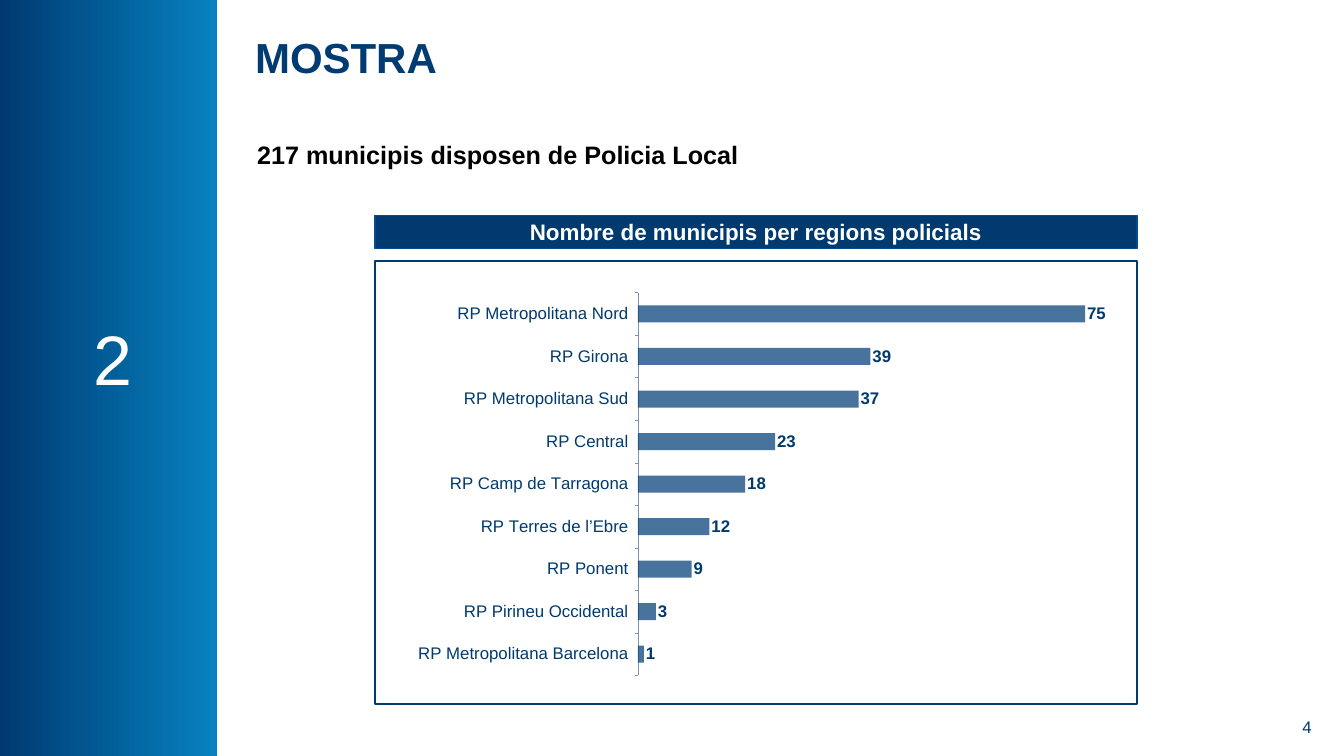
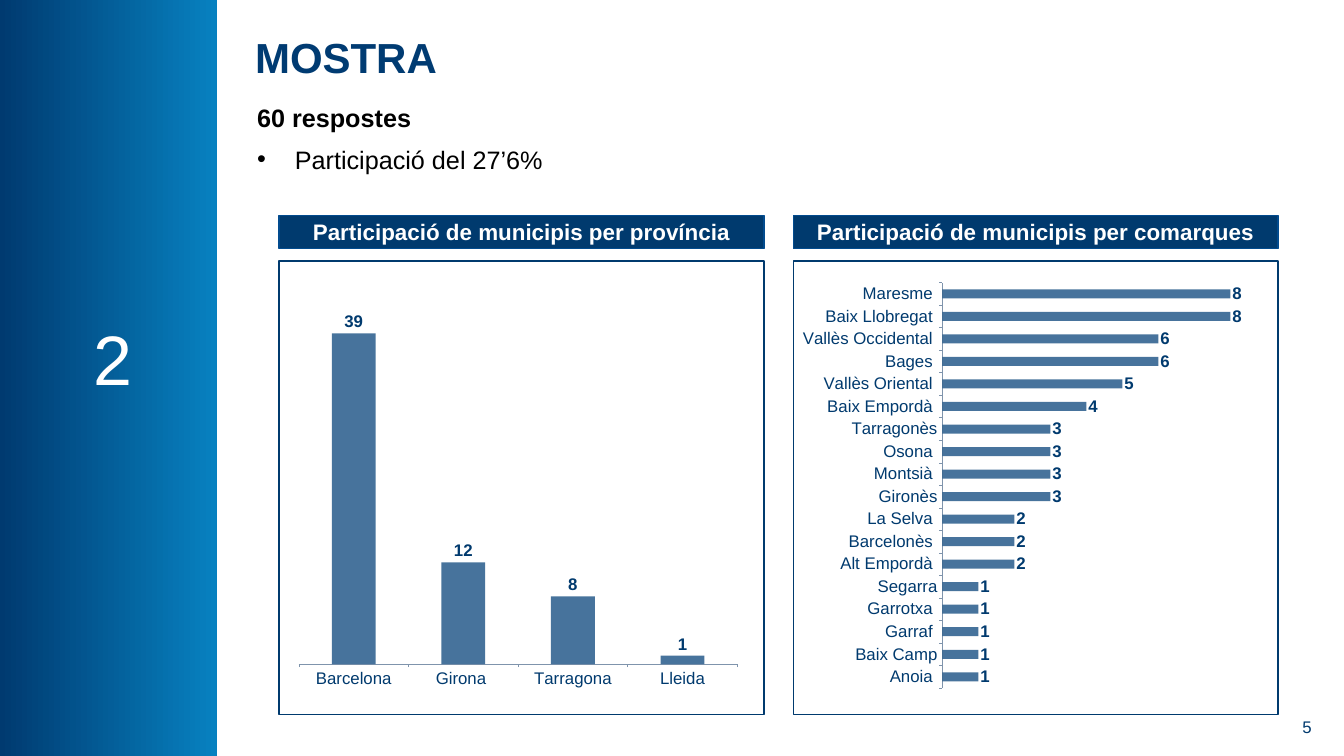
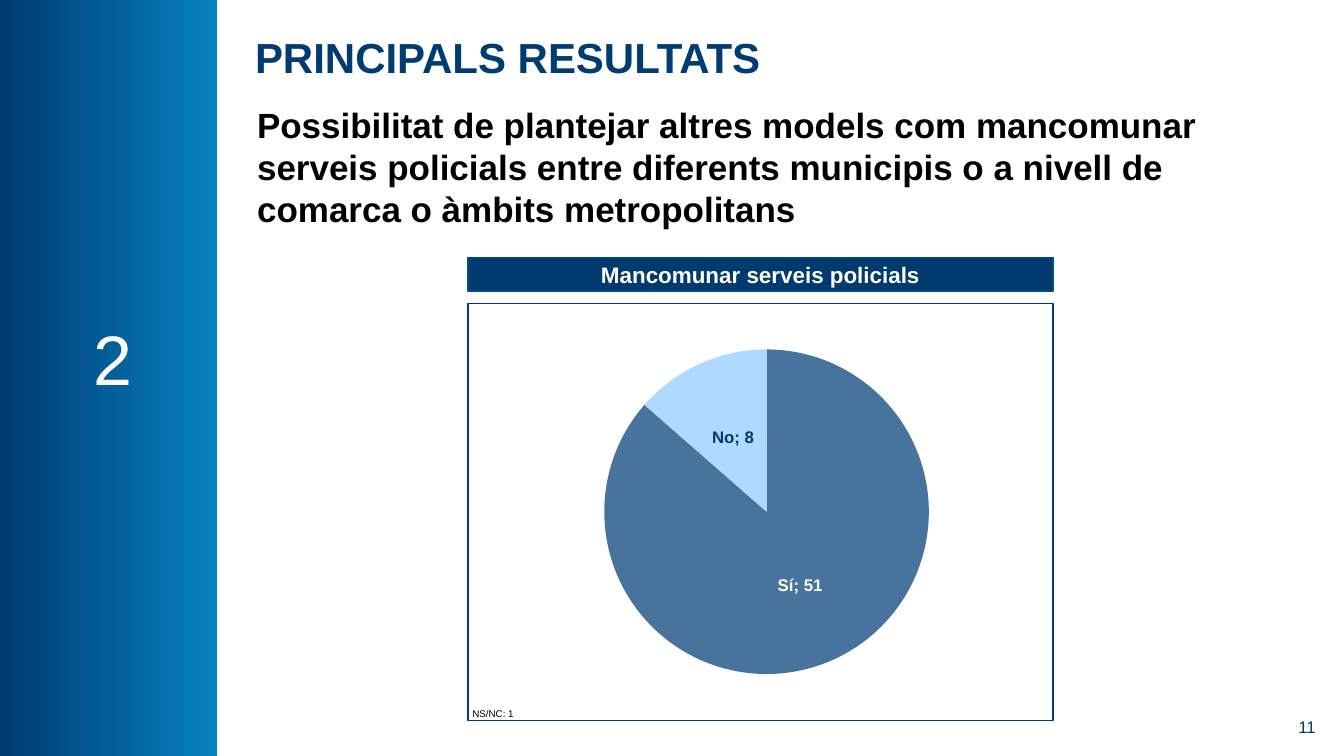
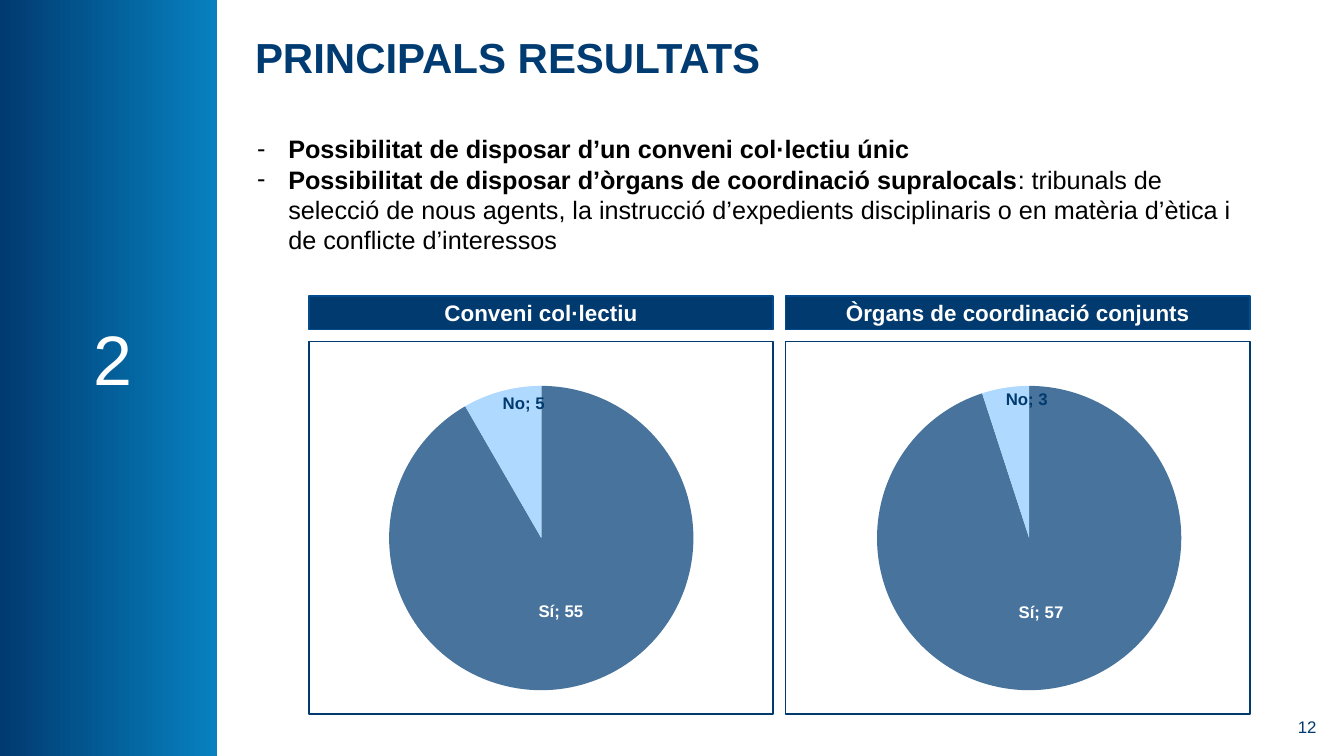
"""Build four slides on the survey sample and its main results."""
from typing import NamedTuple

from lxml.etree import SubElement
from pptx import Presentation
from pptx.chart.data import CategoryChartData
from pptx.dml.color import RGBColor
from pptx.enum.chart import XL_CHART_TYPE, XL_LABEL_POSITION, XL_TICK_MARK
from pptx.enum.shapes import MSO_SHAPE
from pptx.enum.text import MSO_ANCHOR, MSO_AUTO_SIZE, PP_ALIGN
from pptx.oxml.ns import qn
from pptx.util import Inches, Pt


class Theme:
    font = "Arial"
    navy = RGBColor.from_string("003A6E")
    title = RGBColor.from_string("003B72")
    heading_line = RGBColor.from_string("024B8E")
    band = [RGBColor.from_string("003A70"), RGBColor.from_string("0781C0")]
    bar = RGBColor.from_string("003E76")
    bar_opacity = "72000"
    light = RGBColor.from_string("AFD9FF")
    axis = RGBColor.from_string("7F94AC")
    white = RGBColor.from_string("FFFFFF")
    black = RGBColor.from_string("000000")
    section_size, title_size, lead_size, body_size = 100, 60, 50, 36
    heading_size, label_size, note_size = 32, 24, 14


class Panel(NamedTuple):
    heading: str
    left: float
    width: float
    chart_box: tuple
    chart_type: XL_CHART_TYPE
    values: dict
    axis_maximum: int = 0
    pie_share: float = 0
    small_slice_label: XL_LABEL_POSITION = XL_LABEL_POSITION.CENTER


class Page(NamedTuple):
    number: int
    title: str
    body_box: tuple
    body_size: int
    paragraphs: list
    line_spacing: float
    space_after: int
    indent: float
    panel_top: float
    frame_height: float
    panels: list
    note: str = ""


COLUMNS, ROWS = 160, 90
HEADING_HEIGHT, FRAME_OFFSET = 4, 5.46
BAR, COLUMN, PIE = XL_CHART_TYPE.BAR_CLUSTERED, XL_CHART_TYPE.COLUMN_CLUSTERED, XL_CHART_TYPE.PIE

regions = {
    "RP Metropolitana Barcelona ": 1, "RP Pirineu Occidental ": 3, "RP Ponent ": 9,
    "RP Terres de l’Ebre ": 12, "RP Camp de Tarragona ": 18, "RP Central ": 23,
    "RP Metropolitana Sud ": 37, "RP Girona ": 39, "RP Metropolitana Nord ": 75,
}
provinces = {"Barcelona": 39, "Girona ": 12, "Tarragona": 8, "Lleida": 1}
counties = {
    "Anoia ": 1, "Baix Camp": 1, "Garraf ": 1, "Garrotxa ": 1, "Segarra": 1,
    "Alt Empordà ": 2, "Barcelonès ": 2, "La Selva ": 2, "Gironès": 3, "Montsià ": 3,
    "Osona ": 3, "Tarragonès": 3, "Baix Empordà ": 4, "Vallès Oriental ": 5, "Bages ": 6,
    "Vallès Occidental ": 6, "Baix Llobregat ": 8, "Maresme ": 8,
}

pages = [
    Page(
        4, "MOSTRA", (30, 15.8, 112.8, 4.8), Theme.body_size,
        [("", [("217 municipis disposen de Policia Local", True)])],
        1.15, 10, 0, 25.62, 52.74,
        [Panel("Nombre de municipis per regions policials", 44.64, 90.72,
               (48.06, 33.9, 86.4, 47.46), BAR, regions, 80)],
    ),
    Page(
        5, "MOSTRA", (30, 11.34, 112.8, 9.78), Theme.body_size,
        [("", [("60 respostes", True)]), ("•", [("Participació del 27’6%", False)])],
        1.15, 10, 0.75, 25.62, 54,
        [Panel("Participació de municipis per província", 33.24, 57.72,
               (34.5, 32.64, 54.36, 50.28), COLUMN, provinces, 45),
         Panel("Participació de municipis per comarques", 94.44, 57.72,
               (94.44, 32.64, 57.48, 50.28), BAR, counties, 9)],
    ),
    Page(
        11, "PRINCIPALS RESULTATS", (30, 12, 122.5, 15.78), Theme.lead_size,
        [("", [("Possibilitat de plantejar altres models com mancomunar serveis policials entre "
                "diferents municipis o a nivell de comarca o àmbits metropolitans", True)])],
        1, 0, 0, 30.66, 49.68,
        [Panel("Mancomunar serveis policials", 55.74, 69.6,
               (57.84, 40.8, 66.84, 40.26), PIE, {"Sí": 51, "No": 8}, pie_share=0.96)],
        "NS/NC: 1",
    ),
    Page(
        12, "PRINCIPALS RESULTATS", (30, 15.6, 119.2, 15.12), Theme.body_size,
        [("-", [("Possibilitat de disposar d’un conveni col·lectiu únic", True)]),
         ("-", [("Possibilitat de disposar d’òrgans de coordinació supralocals", True),
                (": tribunals de selecció de nous agents, la instrucció d’expedients disciplinaris "
                 "o en matèria d’ètica i de conflicte d’interessos", False)])],
        1, 0, 0.62, 35.22, 44.34,
        [Panel("Conveni col·lectiu", 36.78, 55.26, (31.02, 42.72, 66.84, 40.26), PIE,
               {"Sí": 55, "No": 5}, pie_share=0.9, small_slice_label=XL_LABEL_POSITION.INSIDE_END),
         Panel("Òrgans de coordinació conjunts", 93.54, 55.26, (89.1, 42.72, 66.84, 40.26), PIE,
               {"Sí": 57, "No": 3}, pie_share=0.9, small_slice_label=XL_LABEL_POSITION.INSIDE_END)],
    ),
]

presentation = Presentation()
presentation.slide_width, presentation.slide_height = Inches(26.67), Inches(15)
layout = presentation.slide_layouts[1]


def grid(left, top, width, height):
    """Turn grid columns and rows into slide lengths."""
    column = presentation.slide_width / COLUMNS
    row = presentation.slide_height / ROWS
    return [round(length) for length in (left * column, top * row, width * column, height * row)]


def write(shape, text, size, color, bold=False, alignment=PP_ALIGN.CENTER, margin=0.06):
    """Write one formatted paragraph into a shape and return it."""
    frame = shape.text_frame
    frame.word_wrap = True
    frame.auto_size = MSO_AUTO_SIZE.NONE
    frame.margin_left = frame.margin_right = frame.margin_top = frame.margin_bottom = Inches(margin)
    frame.text = text
    paragraph = frame.paragraphs[0]
    paragraph.alignment = alignment
    font = paragraph.font
    font.name, font.size, font.bold, font.color.rgb = Theme.font, Pt(size), bold, color
    return paragraph


for page in pages:
    slide = presentation.slides.add_slide(layout)

    if page is pages[0]:
        band = slide.shapes.add_shape(MSO_SHAPE.RECTANGLE, *grid(0, 0, 25.8, ROWS))
        band.shadow.inherit = False
        band.line.fill.background()
        band.fill.gradient()
        band.fill.gradient_angle = 0
        for stop, position, color in zip(band.fill.gradient_stops, (0, 1), Theme.band):
            stop.position, stop.color.rgb = position, color
        layout.shapes.element.insert(2, band.element)

    title, body = slide.placeholders
    title.left, title.top, title.width, title.height = grid(30, 2.64, 120.72, 8.1)
    write(title, page.title, Theme.title_size, Theme.title, True, PP_ALIGN.LEFT)
    title.text_frame.vertical_anchor = MSO_ANCHOR.MIDDLE

    section = slide.shapes.add_textbox(*grid(10.5, 40, 6, 9.9))
    write(section, "2", Theme.section_size, Theme.white, margin=0.05).line_spacing = 0.7
    number = slide.shapes.add_textbox(*grid(153.48, 85.02, 4.26, 3.12))
    write(number, str(page.number), Theme.label_size, Theme.navy)

    body.left, body.top, body.width, body.height = grid(*page.body_box)
    frame = body.text_frame
    frame.word_wrap = True
    frame.auto_size = MSO_AUTO_SIZE.NONE
    for index, (bullet, runs) in enumerate(page.paragraphs):
        paragraph = frame.add_paragraph() if index else frame.paragraphs[0]
        paragraph.alignment = PP_ALIGN.JUSTIFY if page.space_after else PP_ALIGN.LEFT
        paragraph.line_spacing = page.line_spacing
        paragraph.space_before, paragraph.space_after = Pt(0), Pt(page.space_after)
        indent = Inches(page.indent) if bullet else 0
        properties = paragraph._p.get_or_add_pPr()
        properties.set("marL", str(indent))
        properties.set("indent", str(-indent))
        if bullet:
            SubElement(properties, qn("a:buChar"), char=bullet)
        else:
            SubElement(properties, qn("a:buNone"))
        font = paragraph.font
        font.name, font.size, font.color.rgb = Theme.font, Pt(page.body_size), Theme.black
        for text, bold in runs:
            run = paragraph.add_run()
            run.text, run.font.bold = text, bold

    for panel in page.panels:
        data = CategoryChartData()
        data.categories = list(panel.values)
        data.add_series("Series 1", list(panel.values.values()))
        chart = slide.shapes.add_chart(panel.chart_type, *grid(*panel.chart_box), data).chart
        chart.has_legend = chart.has_title = False
        chart.font.name, chart.font.size = Theme.font, Pt(Theme.label_size)
        chart.font.color.rgb = Theme.navy
        plot = chart.plots[0]
        series = plot.series[0]
        if panel.chart_type == PIE:
            plot.vary_by_categories = True
            slices = zip((Theme.bar, Theme.light), (Theme.white, Theme.navy),
                         (XL_LABEL_POSITION.CENTER, panel.small_slice_label))
            for index, (fill_color, label_color, position) in enumerate(slices):
                point = series.points[index]
                point.format.fill.solid()
                point.format.fill.fore_color.rgb = fill_color
                label = point.data_label
                label.font.name, label.font.size = Theme.font, Pt(Theme.label_size)
                label.font.bold, label.font.color.rgb = True, label_color
                label.position = position
            for flag in chart.element.xpath(".//c:ser//c:showCatName"):
                flag.set("val", "1")
            for flag in chart.element.xpath(".//c:ser//c:showBubbleSize"):
                separator = SubElement(flag.getparent(), qn("c:separator"))
                separator.text = "; "
                flag.addnext(separator)
            plot_area = chart.element.xpath(".//c:plotArea")[0]
            for old_layout in plot_area.findall(qn("c:layout")):
                plot_area.remove(old_layout)
            plot_layout = SubElement(plot_area, qn("c:layout"))
            plot_area.insert(0, plot_layout)
            manual = SubElement(plot_layout, qn("c:manualLayout"))
            width_share = panel.pie_share * panel.chart_box[3] / panel.chart_box[2]
            settings = {"layoutTarget": "inner", "xMode": "edge", "yMode": "edge",
                        "x": (1 - width_share) / 2, "y": 0.98 - panel.pie_share,
                        "w": width_share, "h": panel.pie_share}
            for name, value in settings.items():
                SubElement(manual, qn(f"c:{name}"), val=str(value))
        else:
            plot.vary_by_categories = False
            plot.gap_width = 150
            series.format.fill.solid()
            series.format.fill.fore_color.rgb = Theme.bar
            labels = series.data_labels
            labels.show_value = True
            labels.position = XL_LABEL_POSITION.OUTSIDE_END
            labels.font.name, labels.font.size = Theme.font, Pt(Theme.label_size)
            labels.font.bold, labels.font.color.rgb = True, Theme.navy
            chart.value_axis.visible = False
            chart.value_axis.has_major_gridlines = False
            chart.value_axis.minimum_scale = 0
            chart.value_axis.maximum_scale = panel.axis_maximum
            chart.category_axis.major_tick_mark = XL_TICK_MARK.OUTSIDE
            chart.category_axis.format.line.color.rgb = Theme.axis
            chart.category_axis.format.line.width = Pt(0.75)
        for color in chart.element.xpath(f".//c:ser//a:srgbClr[@val='{Theme.bar}']"):
            SubElement(color, qn("a:alpha"), val=Theme.bar_opacity)

    for panel in page.panels:
        heading = slide.shapes.add_shape(
            MSO_SHAPE.RECTANGLE, *grid(panel.left, page.panel_top, panel.width, HEADING_HEIGHT))
        heading.fill.solid()
        heading.fill.fore_color.rgb = Theme.navy
        write(heading, panel.heading, Theme.heading_size, Theme.white, True, margin=0.05)
        heading.text_frame.vertical_anchor = MSO_ANCHOR.MIDDLE
        outline = slide.shapes.add_shape(
            MSO_SHAPE.RECTANGLE,
            *grid(panel.left, page.panel_top + FRAME_OFFSET, panel.width, page.frame_height))
        outline.fill.background()
        for shape, color in ((heading, Theme.heading_line), (outline, Theme.navy)):
            shape.shadow.inherit = False
            shape.line.color.rgb, shape.line.width = color, Pt(2)

    if page.note:
        note = slide.shapes.add_textbox(*grid(page.panels[0].left, 83.76, 16.62, 2.04))
        write(note, page.note, Theme.note_size, Theme.black, alignment=PP_ALIGN.LEFT, margin=0.08)

presentation.save("out.pptx")
